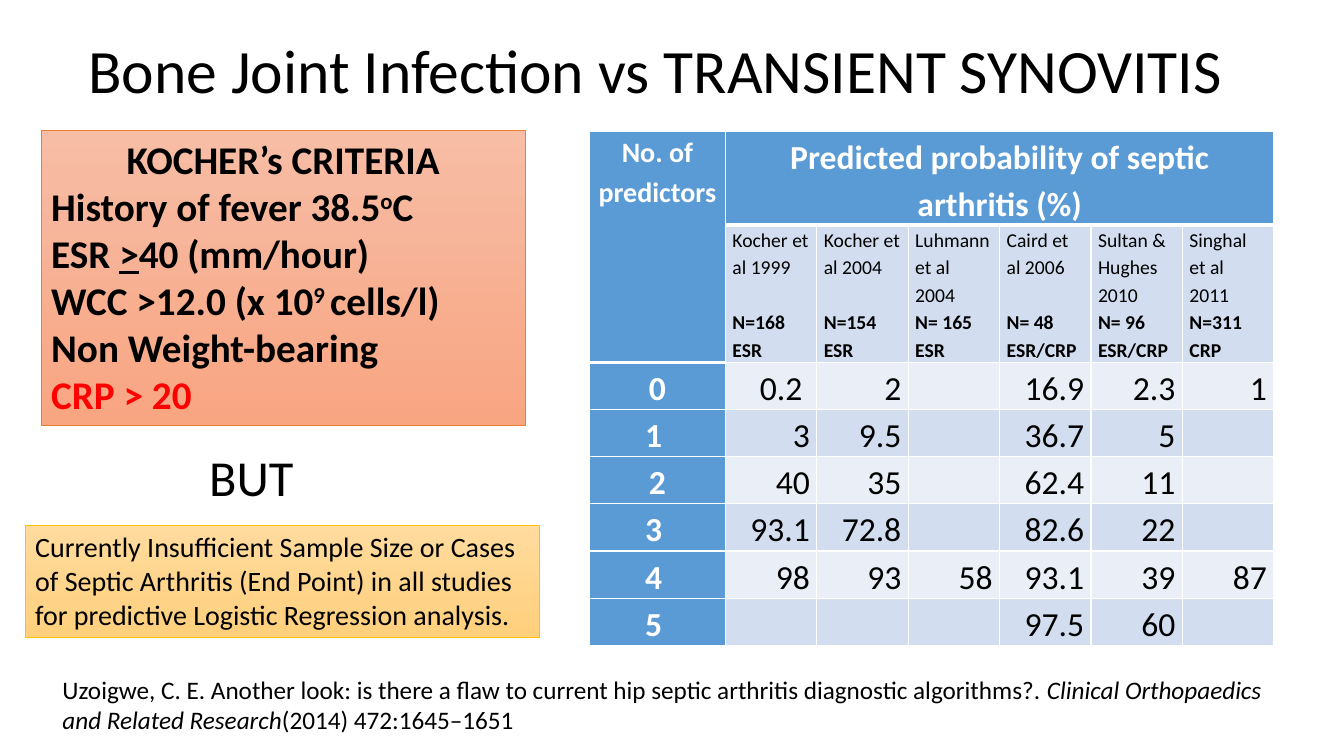
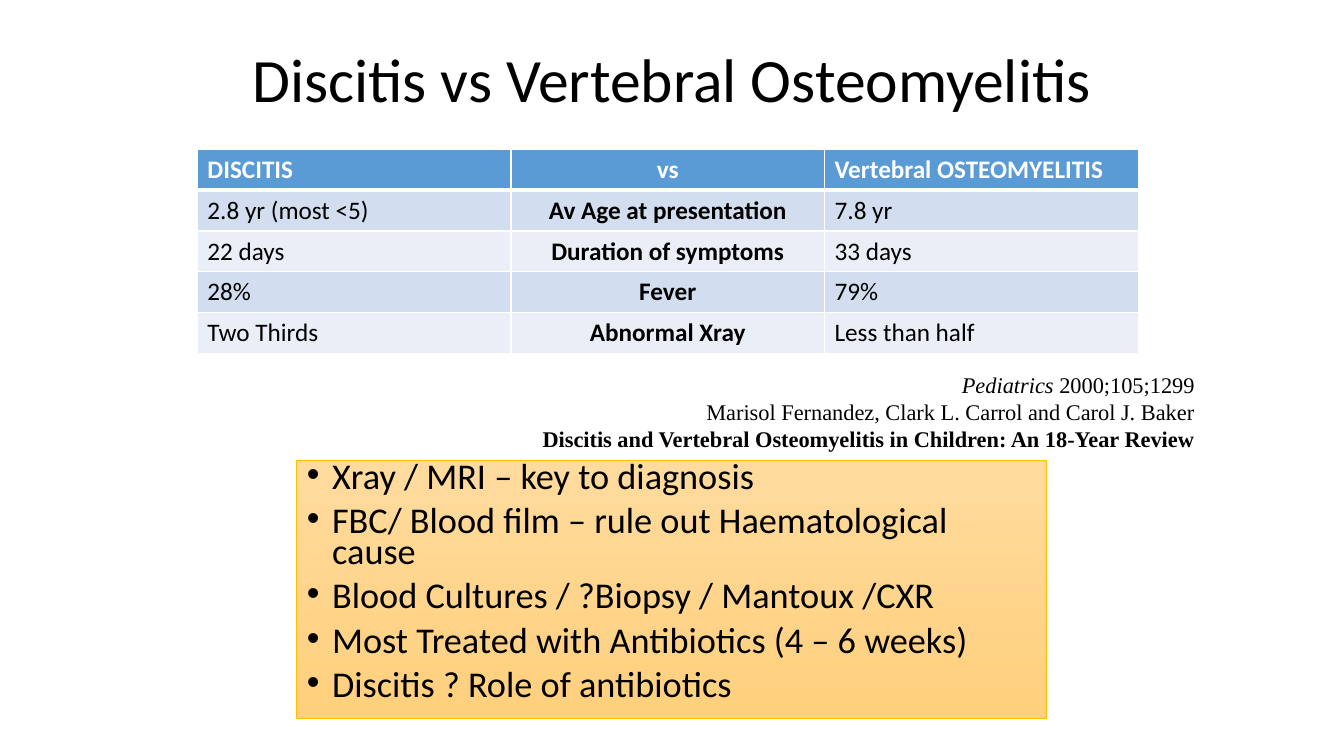
import pptx
import pptx.util
import pptx.dml.color
import pptx.enum.shapes
import pptx.enum.text
import pptx.oxml
import pptx.oxml.ns

Pt = pptx.util.Pt
ALIGN = pptx.enum.text.PP_ALIGN
ANCHOR = pptx.enum.text.MSO_ANCHOR

COLORS = {
    "text": "000000", "white": "FFFFFF", "alert": "FF0000",
    "header": "5B9BD5", "band_dark": "D2DEEF", "band_light": "EAEFF7",
    "orange_top": "F7BDA5", "orange_bottom": "F8A582", "orange_line": "ED7D31",
    "gold_top": "FFDB9E", "gold_bottom": "FFD07C", "gold_line": "FFC000",
}
SANS = "Calibri"
SERIF = "Times New Roman"

CRITERIA = [
    [("KOCHER’s CRITERIA", {})],
    [("History of fever 38.5", {}), ("o", {"super": True}), ("C", {})],
    [("ESR ", {}), (">", {"underline": True}), ("40 (mm/hour)", {})],
    [("WCC >12.0 (x 10", {}), ("9 ", {"super": True}), ("cells/l)", {})],
    [("Non Weight-bearing", {})],
    [("CRP > 20", {"color": "alert"})],
]
CAUTION = ("Currently Insufficient Sample Size or Cases of Septic Arthritis (End Point) "
           "in all studies for predictive Logistic Regression analysis.")
CITATION = [
    ("Uzoigwe, C. E. Another look: is there a flaw to current hip septic arthritis "
     "diagnostic algorithms?. ", {}),
    ("Clinical Orthopaedics and Related Research", {"italic": True}),
    ("(2014) 472:1645–1651", {}),
]
STUDIES = [
    ("Kocher et al 1999", "N=168", "ESR", 2),
    ("Kocher et al 2004", "N=154", "ESR", 2),
    ("Luhmann et al 2004", "N= 165", "ESR", 3),
    ("Caird et al 2006", "N= 48", "ESR/CRP", 2),
    ("Sultan & Hughes 2010", "N= 96", "ESR/CRP", 3),
    ("Singhal et al 2011", "N=311", "CRP", 3),
]
PROBABILITIES = [
    ("0", "0.2 ", "2", "", "16.9", "2.3", "1"),
    ("1 ", "3", "9.5", "", "36.7", "5", ""),
    ("2", "40", "35", "", "62.4", "11", ""),
    ("3 ", "93.1", "72.8", "", "82.6", "22", ""),
    ("4 ", "98", "93", "58", "93.1", "39", "87"),
    ("5 ", "", "", "", "97.5", "60", ""),
]
COMPARISON = [
    ("DISCITIS", "vs", "Vertebral OSTEOMYELITIS"),
    ("2.8 yr (most <5)", "Av Age at presentation", "7.8 yr"),
    ("22 days", "Duration of symptoms", "33 days"),
    ("28%", "Fever", "79%"),
    ("Two Thirds", "Abnormal Xray", "Less than half"),
]
REFERENCE = [
    [("Pediatrics ", {"italic": True}), ("2000;105;1299", {})],
    [("Marisol Fernandez, Clark L. Carrol and Carol J. Baker", {})],
    [("Discitis and Vertebral Osteomyelitis in Children: An 18-Year Review", {"bold": True})],
]
MANAGEMENT = [
    "Xray / MRI – key to diagnosis",
    "FBC/ Blood film – rule out Haematological cause",
    "Blood Cultures / ?Biopsy / Mantoux /CXR",
    "Most Treated with Antibiotics (4 – 6 weeks)",
    "Discitis ? Role of antibiotics",
]


def rgb(name):
    return pptx.dml.color.RGBColor.from_string(COLORS[name])


def place(sp, box):
    sp.left, sp.top, sp.width, sp.height = (Pt(v) for v in box)


def format_paragraph(p, size, align=ALIGN.LEFT, bold=False, color="text", font=SANS, spacing=None):
    p.alignment = align
    p.font.size = Pt(size)
    p.font.name = font
    p.font.bold = bold
    p.font.color.rgb = rgb(color)
    if spacing:
        p.line_spacing = spacing


def add_runs(p, runs):
    for text, style in runs:
        r = p.add_run()
        r.text = text
        for key in ("bold", "italic", "underline"):
            if key in style:
                setattr(r.font, key, style[key])
        if "color" in style:
            r.font.color.rgb = rgb(style["color"])
        if "super" in style:
            r._r.get_or_add_rPr().set("baseline", "30000")


def write(tf, lines, size, **style):
    tf.word_wrap = True
    tf.auto_size = pptx.enum.text.MSO_AUTO_SIZE.NONE
    for i, line in enumerate(lines):
        p = tf.add_paragraph() if i else tf.paragraphs[0]
        format_paragraph(p, size, **style)
        add_runs(p, [(line, {})] if isinstance(line, str) else line)


def set_title(slide, text, box, align):
    sp = slide.shapes.title
    place(sp, box)
    sp.text_frame.vertical_anchor = ANCHOR.MIDDLE
    write(sp.text_frame, [text], 44, align=align, spacing=0.9)


def paint_panel(sp, hue):
    sp.fill.gradient()
    sp.fill.gradient_angle = 270
    for stop, end in zip(sp.fill.gradient_stops, ("top", "bottom")):
        stop.color.rgb = rgb(f"{hue}_{end}")
    sp.line.color.rgb = rgb(f"{hue}_line")
    sp.line.width = Pt(0.5)


def add_panel(slide, box, hue, lines, size, **style):
    sp = slide.shapes.add_shape(pptx.enum.shapes.MSO_SHAPE.RECTANGLE, *(Pt(v) for v in box))
    sp.shadow.inherit = False
    paint_panel(sp, hue)
    sp.text_frame.vertical_anchor = ANCHOR.TOP
    write(sp.text_frame, lines, size, **style)
    return sp


def add_text(slide, box, lines, size, **style):
    sp = slide.shapes.add_textbox(*(Pt(v) for v in box))
    write(sp.text_frame, lines, size, **style)


def set_borders(cell, top, bottom):
    tcPr = cell._tc.get_or_add_tcPr()
    for side, width in (("L", 1), ("R", 1), ("T", top), ("B", bottom)):
        tcPr.append(pptx.oxml.parse_xml(
            f'<a:ln{side} {pptx.oxml.ns.nsdecls("a")} w="{Pt(width)}"><a:solidFill>'
            f'<a:srgbClr val="{COLORS["white"]}"/></a:solidFill></a:ln{side}>'))


def add_grid(slide, box, widths, heights, fill_of, thick, margins=None):
    table = slide.shapes.add_table(len(heights), len(widths), *(Pt(v) for v in box)).table
    for column, width in zip(table.columns, widths):
        column.width = Pt(width)
    for row, height in zip(table.rows, heights):
        row.height = Pt(height)
    for r in range(len(heights)):
        for c in range(len(widths)):
            cell = table.cell(r, c)
            set_borders(cell, 3 if (r - 1, c) in thick else 1, 3 if (r, c) in thick else 1)
            cell.fill.solid()
            cell.fill.fore_color.rgb = rgb(fill_of(r, c))
            if margins:
                cell.margin_left = cell.margin_right = Pt(margins[0])
                cell.margin_top = cell.margin_bottom = Pt(margins[1])
    return table


def band(r):
    return "band_dark" if r % 2 else "band_light"


def add_probability_table(slide, box):
    first, rest = 97.2, (box[2] - 97.2) / len(STUDIES)
    table = add_grid(
        slide, box, [first] + [rest] * len(STUDIES), [66, 97] + [33] * len(PROBABILITIES),
        lambda r, c: "header" if r == 0 or c == 0 else band(r),
        {(0, c) for c in range(1, 7)} | {(1, 0)}, (5, 0))
    table.cell(0, 0).merge(table.cell(1, 0))
    table.cell(0, 1).merge(table.cell(0, 6))
    heading = {"align": ALIGN.CENTER, "bold": True, "color": "white", "spacing": 1.15}
    write(table.cell(0, 0).text_frame, ["No. of predictors"], 20, **heading)
    write(table.cell(0, 1).text_frame, ["Predicted probability of septic arthritis (%)"], 24, **heading)
    for c, (name, count, marker, name_lines) in enumerate(STUDIES, 1):
        tf = table.cell(1, c).text_frame
        write(tf, [name, count, marker], 14, spacing=1.15)
        for p in tf.paragraphs[1:]:
            p.font.bold = True
        tf.paragraphs[1].space_before = Pt((3 - name_lines) * 19.6)
    for r, values in enumerate(PROBABILITIES, 2):
        for c, value in enumerate(values):
            if value:
                style = {"align": ALIGN.RIGHT, "spacing": 1.15} if c else heading
                write(table.cell(r, c).text_frame, [value], 24, **style)


def add_comparison_table(slide, box):
    count = len(COMPARISON)
    table = add_grid(slide, box, [box[2] / 3] * 3, [box[3] / count] * count,
                     lambda r, c: band(r) if r else "header", {(0, c) for c in range(3)})
    for r, values in enumerate(COMPARISON):
        for c, value in enumerate(values):
            write(table.cell(r, c).text_frame, [value], 18,
                  align=ALIGN.CENTER if c == 1 else ALIGN.LEFT,
                  bold=r == 0 or c == 1, color="text" if r else "white")


def add_management_list(slide, box):
    sp = slide.placeholders[1]
    place(sp, box)
    paint_panel(sp, "gold")
    write(sp.text_frame, MANAGEMENT, 25.9, spacing=0.7)
    for p in sp.text_frame.paragraphs:
        p.space_before = Pt(10)
        pPr = p._p.get_or_add_pPr()
        pPr.set("marL", str(Pt(18)))
        pPr.set("indent", str(-Pt(18)))


def build_synovitis_slide(prs):
    slide = prs.slides.add_slide(prs.slide_layouts[5])
    set_title(slide, "Bone Joint Infection vs TRANSIENT SYNOVITIS", (56, 0, 828, 104.4), ALIGN.LEFT)
    criteria = add_panel(slide, (29.5, 93, 345.5, 211), "orange", CRITERIA, 28, bold=True)
    criteria.text_frame.paragraphs[0].alignment = ALIGN.CENTER
    add_probability_table(slide, (421, 93.6, 489, 361))
    add_text(slide, (37.5, 478, 893.5, 51), [CITATION], 18)
    add_panel(slide, (18, 375, 367, 80), "gold", [CAUTION], 20)
    add_text(slide, (137, 315.4, 85, 51), ["BUT"], 36, align=ALIGN.CENTER)


def build_discitis_slide(prs):
    slide = prs.slides.add_slide(prs.slide_layouts[1])
    set_title(slide, "Discitis vs Vertebral Osteomyelitis", (66, 7, 828, 104.4), ALIGN.CENTER)
    add_comparison_table(slide, (141, 106.6, 672, 146))
    add_management_list(slide, (212, 328.5, 535.5, 185))
    add_text(slide, (14.4, 261.4, 846, 67.7), REFERENCE, 16, align=ALIGN.RIGHT, font=SERIF)


def main():
    prs = pptx.Presentation()
    prs.slide_width, prs.slide_height = Pt(960), Pt(540)
    build_synovitis_slide(prs)
    build_discitis_slide(prs)
    prs.save("out.pptx")


if __name__ == "__main__":
    main()
